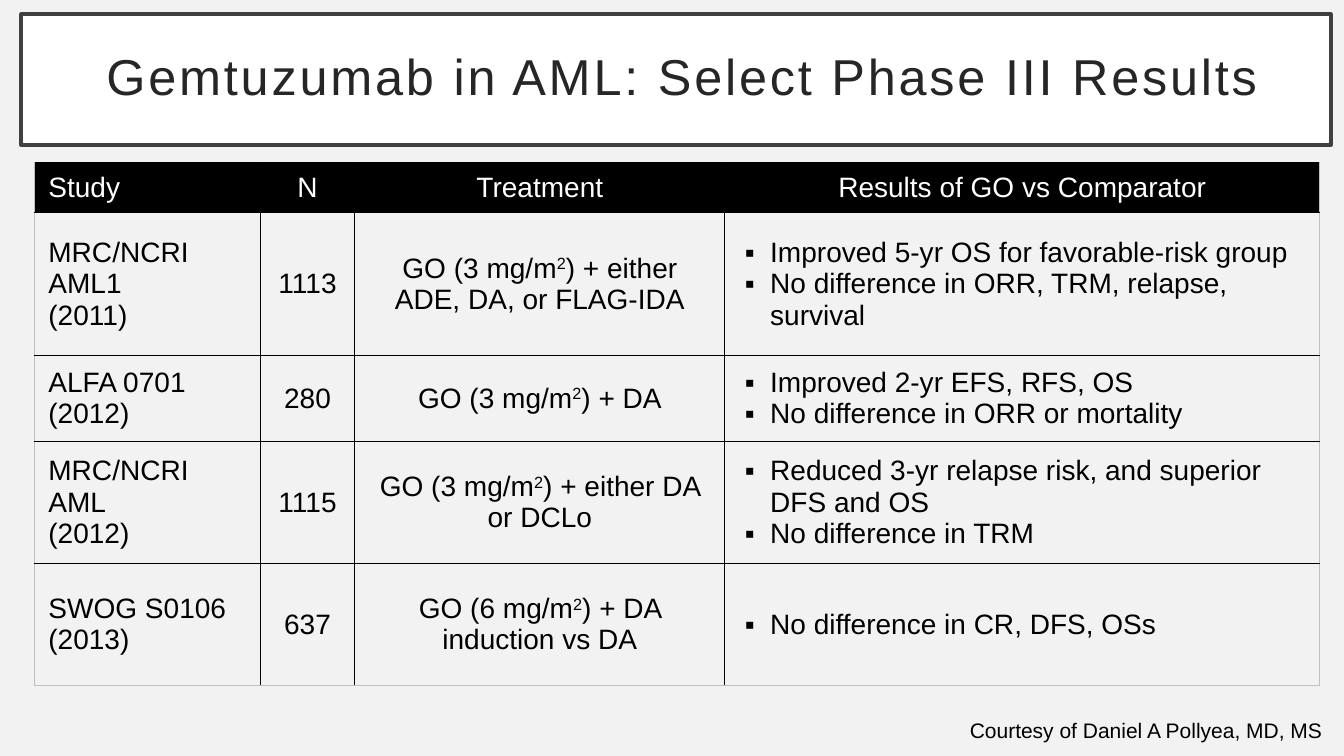
"""Build a slide with a table of phase III gemtuzumab trials."""
from lxml.etree import SubElement
from pptx import Presentation
from pptx.dml.color import RGBColor
from pptx.enum.shapes import MSO_SHAPE
from pptx.enum.text import MSO_ANCHOR, MSO_AUTO_SIZE, PP_ALIGN
from pptx.oxml import parse_xml
from pptx.oxml.ns import nsdecls, qn
from pptx.util import Inches, Pt

TITLE = "Gemtuzumab in AML: Select Phase III Results"
CREDIT = "Courtesy of\u00a0Daniel A Pollyea, MD, MS"
HEAD = ("Study", "N", "Treatment", "Results of GO vs Comparator")
TRIALS = [
    ("MRC/NCRI AML1\n(2011)", "1113",
     "GO (3 mg/m^2^) + either ADE, DA, or FLAG-IDA",
     "Improved 5-yr OS for favorable-risk group\n"
     "No difference in ORR, TRM, relapse, survival"),
    ("ALFA 0701 (2012)", "280", "GO (3 mg/m^2^) + DA",
     "Improved 2-yr EFS, RFS, OS\nNo difference in ORR or mortality"),
    ("MRC/NCRI AML\n(2012)", "1115", "GO (3 mg/m^2^) + either DA or DCLo",
     "Reduced 3-yr relapse risk, and superior DFS and OS\n"
     "No difference in TRM"),
    ("SWOG S0106 (2013)", "637", "GO (6 mg/m^2^) + DA induction vs DA",
     "No difference in CR, DFS, OSs"),
]
COLS = (2.24, 0.94, 3.67, 5.9)
ROWS = (0.5, 1.42, 0.85, 1.21, 1.21)
HUES = {"page": "F2F2F2", "white": "FFFFFF", "black": "000000",
        "frame": "404040", "title": "262626", "edge": "BFBFBF"}
INSET = {"margin_left": Inches(0.14), "margin_right": Inches(0.14),
         "margin_top": Inches(0.07), "margin_bottom": Inches(0.07),
         "vertical_anchor": MSO_ANCHOR.MIDDLE}


def hue(name):
    return RGBColor.from_string(HUES[name])


def paint(fill, name):
    fill.solid()
    fill.fore_color.rgb = hue(name)


def apply(thing, form):
    for key, val in form.items():
        setattr(thing, key, val)


def write(para, text, size, name):
    for num, part in enumerate(text.split("^")):
        run = para.add_run()
        run.text = part
        apply(run.font, {"size": Pt(size), "name": "Arial"})
        run.font.color.rgb = hue(name)
        if num % 2:
            run.font._element.set("baseline", "30000")


def bullet(para):
    props = para._p.get_or_add_pPr()
    props.set("marL", str(Inches(0.31)))
    props.set("indent", str(Inches(-0.25)))
    SubElement(props, qn("a:buFont"), typeface="Arial")
    SubElement(props, qn("a:buChar"), char="▪")


def border(cell, row, col):
    outer = {"L": col == 0, "R": col == len(COLS) - 1,
             "T": False, "B": row == len(ROWS) - 1}
    for num, (side, edge) in enumerate(outer.items()):
        shade = HUES["edge" if edge else "black"]
        cell._tc.get_or_add_tcPr().insert(num, parse_xml(
            f'<a:ln{side} {nsdecls("a")} w="{Pt(1)}"><a:solidFill>'
            f'<a:srgbClr val="{shade}"/></a:solidFill></a:ln{side}>'))


def fill_cell(cell, text, row, col):
    apply(cell, INSET)
    if row:
        cell.fill.background()
    else:
        paint(cell.fill, "black")
    border(cell, row, col)
    frame = cell.text_frame
    for num, line in enumerate(text.split("\n")):
        para = frame.add_paragraph() if num else frame.paragraphs[0]
        if row and col == 3:
            bullet(para)
        elif col:
            para.alignment = PP_ALIGN.CENTER
        write(para, line, 20, "black" if row else "white")


def add_title(slide):
    box = slide.shapes.add_shape(MSO_SHAPE.RECTANGLE, *map(Inches, (0.21, 0.14, 12.99, 1.3)))
    box.shadow.inherit = False
    paint(box.fill, "white")
    box.line.color.rgb = hue("frame")
    box.line.width = Pt(2.5)
    frame = box.text_frame
    apply(frame, {"margin_left": Inches(0.33), "margin_right": Inches(0.2),
                  "word_wrap": True, "vertical_anchor": MSO_ANCHOR.MIDDLE})
    para = frame.paragraphs[0]
    apply(para, {"alignment": PP_ALIGN.CENTER, "line_spacing": 0.9})
    write(para, TITLE, 36, "title")
    para.runs[0].font._element.set("spc", "200")


def add_grid(slide):
    area = map(Inches, (0.34, 1.61, sum(COLS), sum(ROWS)))
    grid = slide.shapes.add_table(len(ROWS), len(COLS), *area).table
    apply(grid, {"first_row": False, "horz_banding": False})
    for col, wide in zip(grid.columns, COLS):
        col.width = Inches(wide)
    for row, high in zip(grid.rows, ROWS):
        row.height = Inches(high)
    for row, texts in enumerate([HEAD, *TRIALS]):
        for col, text in enumerate(texts):
            fill_cell(grid.cell(row, col), text, row, col)


def add_credit(slide):
    box = slide.shapes.add_textbox(*map(Inches, (9.52, 7.07, 3.74, 0.35)))
    apply(box.text_frame, {"word_wrap": False,
                           "auto_size": MSO_AUTO_SIZE.SHAPE_TO_FIT_TEXT})
    write(box.text_frame.paragraphs[0], CREDIT, 15, "black")


def main():
    deck = Presentation()
    apply(deck, {"slide_width": Inches(13.33), "slide_height": Inches(7.5)})
    slide = deck.slides.add_slide(deck.slide_layouts[6])
    paint(slide.background.fill, "page")
    add_grid(slide)
    add_title(slide)
    add_credit(slide)
    deck.save("out.pptx")


if __name__ == "__main__":
    main()
